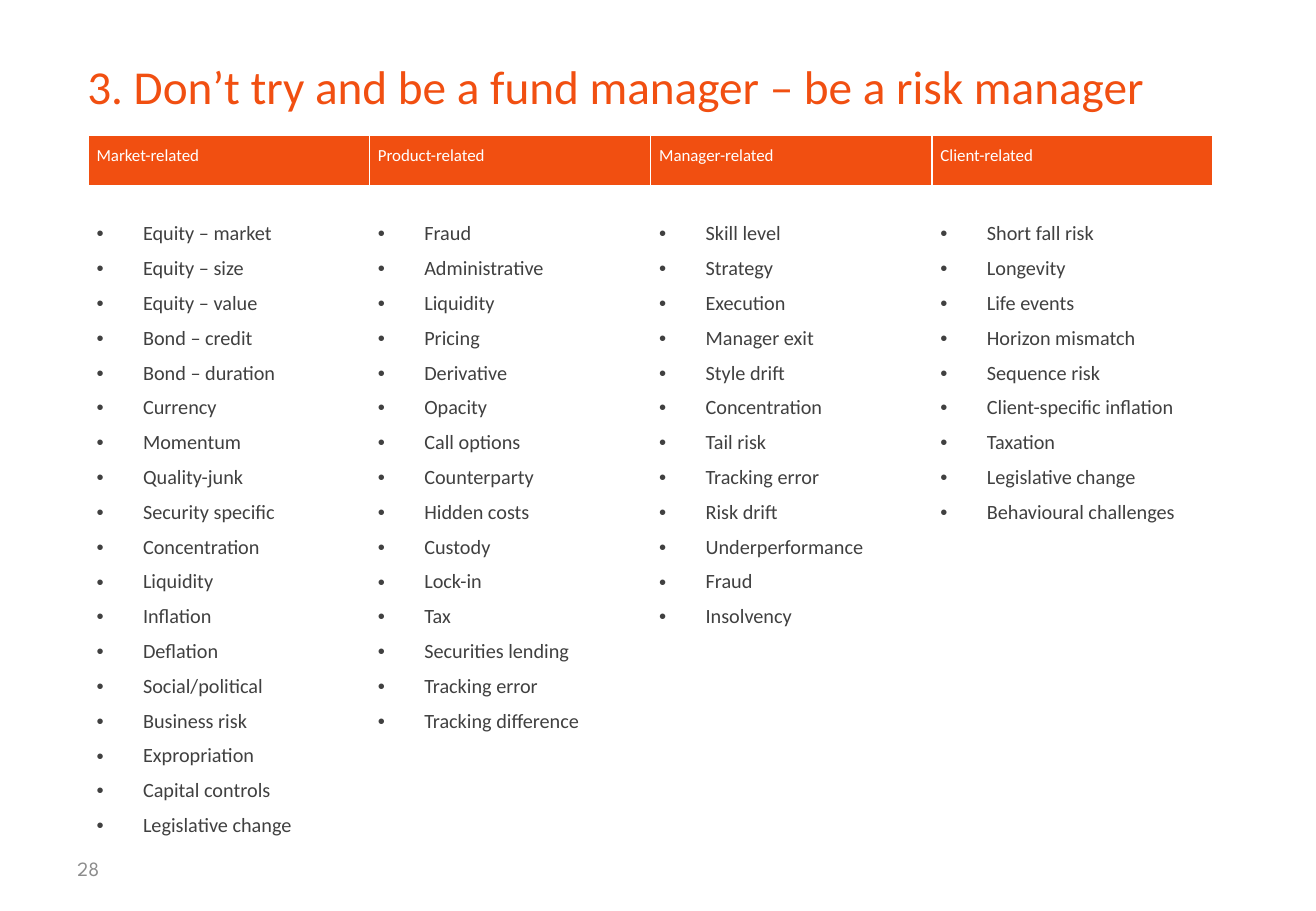
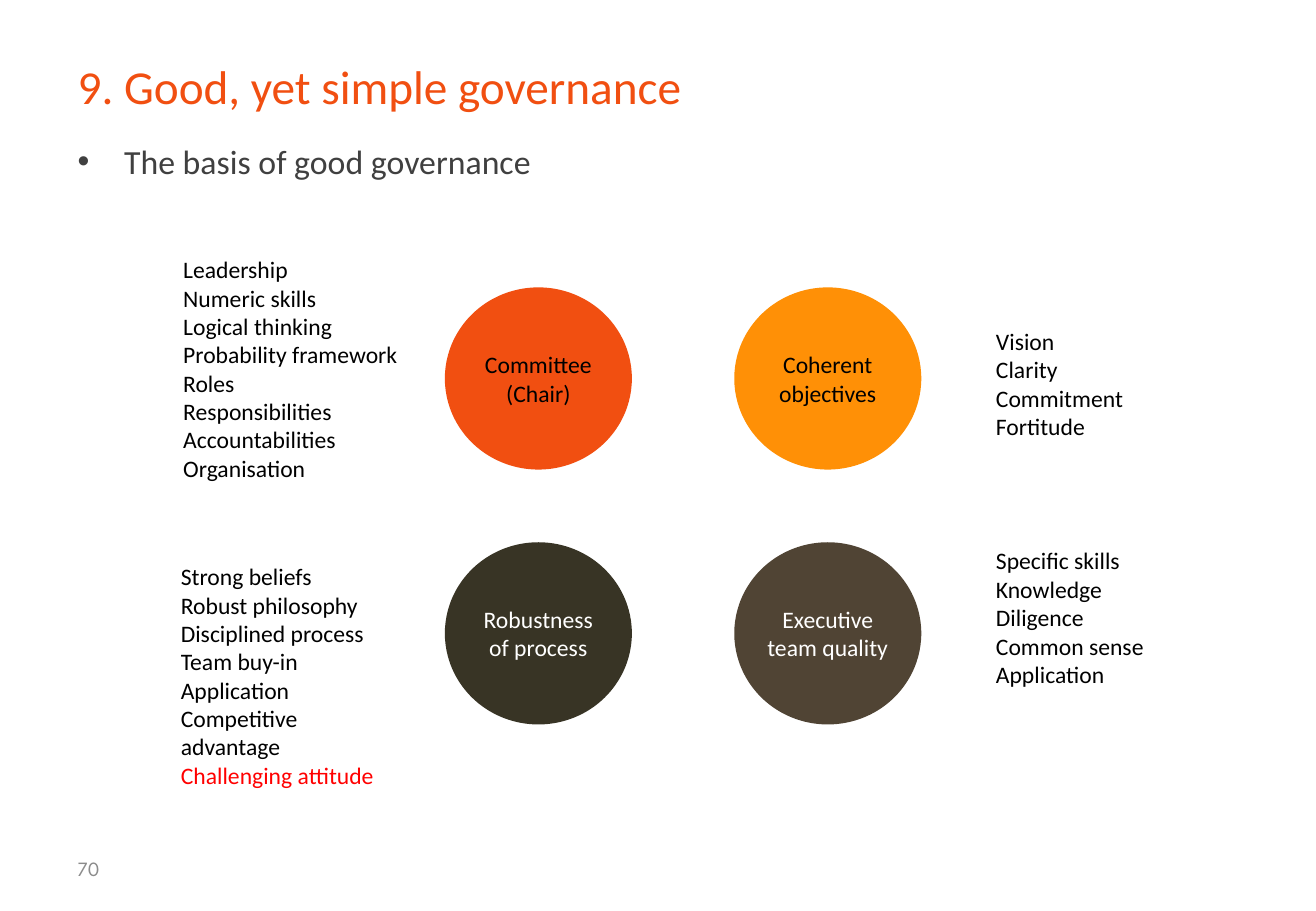
from dataclasses import dataclass

from lxml import etree
from pptx import Presentation
from pptx.dml.color import RGBColor
from pptx.enum.shapes import MSO_SHAPE
from pptx.enum.text import MSO_ANCHOR, PP_ALIGN
from pptx.oxml.ns import qn
from pptx.util import Cm, Pt

ELLIPSE = MSO_SHAPE.OVAL
MIDDLE = MSO_ANCHOR.MIDDLE
TOP = MSO_ANCHOR.TOP
LEFT = PP_ALIGN.LEFT
CENTER = PP_ALIGN.CENTER

COLORS = {
    "orange": "F14F11",
    "amber": "FF9006",
    "olive": "383425",
    "brown": "504434",
    "body": "404040",
    "number": "8C8C8C",
    "black": "000000",
    "white": "FFFFFF",
    "red": "FF0000",
}
TEXT_FONT = "Calibri"
NUMBER_FONT = "League Spartan"
MARGIN_LEFT = 1.37
CONTENT_TOP = 2.82
CONTENT_WIDTH = 24.77
HANGING_INDENT = Cm(0.97)


@dataclass(frozen=True)
class RiskGroup:
    heading: str
    risks: list[str]


@dataclass(frozen=True)
class Pillar:
    column: int
    row: int
    fill: str
    text_color: str
    lines: list[str]


@dataclass(frozen=True)
class Attributes:
    left: float
    top: float
    width: float
    height: float
    lines: list[str]


RISK_GROUPS = [
    RiskGroup("Market-related", [
        "Equity – market", "Equity – size", "Equity – value", "Bond – credit",
        "Bond – duration", "Currency", "Momentum", "Quality-junk",
        "Security specific", "Concentration", "Liquidity", "Inflation",
        "Deflation", "Social/political", "Business risk", "Expropriation",
        "Capital controls", "Legislative change",
    ]),
    RiskGroup("Product-related", [
        "Fraud", "Administrative", "Liquidity", "Pricing", "Derivative",
        "Opacity", "Call options", "Counterparty", "Hidden costs", "Custody",
        "Lock-in", "Tax", "Securities lending", "Tracking error",
        "Tracking difference",
    ]),
    RiskGroup("Manager-related", [
        "Skill level", "Strategy", "Execution", "Manager exit", "Style drift",
        "Concentration", "Tail risk", "Tracking error", "Risk drift",
        "Underperformance", "Fraud", "Insolvency",
    ]),
    RiskGroup("Client-related", [
        "Short fall risk", "Longevity", "Life events", "Horizon mismatch",
        "Sequence risk", "Client-specific inflation", "Taxation",
        "Legislative change", "Behavioural challenges",
    ]),
]

PILLARS = [
    Pillar(0, 0, "orange", "black", ["Committee", "(Chair)"]),
    Pillar(1, 0, "amber", "black", ["Coherent objectives"]),
    Pillar(0, 1, "olive", "white", ["Robustness of process"]),
    Pillar(1, 1, "brown", "white", ["Executive team quality"]),
]

CHALLENGE = "Challenging attitude"
ATTRIBUTES = [
    Attributes(3.58, 5.21, 5.05, 6.0, [
        "Leadership", "Numeric skills", "Logical thinking",
        "Probability framework", "Roles", "Responsibilities",
        "Accountabilities", "Organisation",
    ]),
    Attributes(20.57, 6.71, 3.6, 3.1, [
        "Vision", "Clarity", "Commitment", "Fortitude",
    ]),
    Attributes(3.53, 11.63, 5.05, 5.3, [
        "Strong beliefs", "Robust philosophy", "Disciplined process",
        "Team buy-in", "Application", "Competitive advantage", CHALLENGE,
    ]),
    Attributes(20.57, 11.3, 4.0, 3.7, [
        "Specific skills", "Knowledge", "Diligence", "Common sense",
        "Application",
    ]),
]


def rgb(color: str) -> RGBColor:
    return RGBColor.from_string(COLORS[color])


def add_run(paragraph, text: str, size: float, color: str,
            font: str = TEXT_FONT) -> None:
    run = paragraph.add_run()
    run.text = text
    run.font.size = Pt(size)
    run.font.name = font
    run.font.bold = False
    run.font.color.rgb = rgb(color)


def next_paragraph(text_frame, index: int):
    return text_frame.add_paragraph() if index else text_frame.paragraphs[0]


def add_bullet(paragraph) -> None:
    properties = paragraph._p.get_or_add_pPr()
    properties.set("marL", str(HANGING_INDENT))
    properties.set("indent", str(-HANGING_INDENT))
    etree.SubElement(properties, qn("a:buFont")).set("typeface", "Arial")
    etree.SubElement(properties, qn("a:buChar")).set("char", "•")


def place(shape, left: float, top: float, width: float, height: float) -> None:
    shape.left, shape.top = Cm(left), Cm(top)
    shape.width, shape.height = Cm(width), Cm(height)


def add_text_box(slide, left: float, top: float, width: float, height: float,
                 anchor=TOP):
    box = slide.shapes.add_textbox(Cm(left), Cm(top), Cm(width), Cm(height))
    box.text_frame.word_wrap = True
    box.text_frame.vertical_anchor = anchor
    return box.text_frame


def add_base_slide(presentation, layout: int, title: str, number: str,
                   title_left: float = MARGIN_LEFT):
    slide = presentation.slides.add_slide(presentation.slide_layouts[layout])
    place(slide.shapes.title, title_left, 0.76, CONTENT_WIDTH, 2.06)
    title_frame = slide.shapes.title.text_frame
    title_frame.vertical_anchor = MIDDLE
    title_frame.paragraphs[0].alignment = LEFT
    add_run(title_frame.paragraphs[0], title, 28, "orange")

    number_frame = add_text_box(slide, MARGIN_LEFT, 17.65, 4.8, 1.02, MIDDLE)
    add_run(number_frame.paragraphs[0], number, 12, "number", NUMBER_FONT)
    return slide


def set_borders(cell, top: float, bottom: float) -> None:
    properties = cell._tc.get_or_add_tcPr()
    for side, width in (("L", 1), ("R", 1), ("T", top), ("B", bottom)):
        line = etree.SubElement(properties, qn(f"a:ln{side}"))
        line.set("w", str(Pt(width)))
        fill = etree.SubElement(line, qn("a:solidFill"))
        etree.SubElement(fill, qn("a:srgbClr")).set("val", COLORS["white"])


def set_cell_margins(cell, top) -> None:
    cell.margin_left = cell.margin_right = Cm(0.18)
    cell.margin_top, cell.margin_bottom = top, 0


def add_risk_table(slide) -> None:
    column_width, heading_height, list_height = 5.88, 1.09, 13.9
    count = len(RISK_GROUPS)
    table = slide.shapes.add_table(
        2, count, Cm(1.84), Cm(CONTENT_TOP), Cm(column_width * count),
        Cm(heading_height + list_height)).table
    table.horz_banding = False
    table.rows[0].height = Cm(heading_height)
    table.rows[1].height = Cm(list_height)
    for column, group in enumerate(RISK_GROUPS):
        table.columns[column].width = Cm(column_width)
        heading, risk_list = table.cell(0, column), table.cell(1, column)

        set_borders(heading, 1, 3)
        set_cell_margins(heading, Pt(6.5))
        heading.fill.solid()
        heading.fill.fore_color.rgb = rgb("orange")
        add_run(heading.text_frame.paragraphs[0], group.heading, 10, "white")

        set_borders(risk_list, 3, 1)
        set_cell_margins(risk_list, Pt(20.5))
        risk_list.fill.background()
        for index, risk in enumerate(group.risks):
            paragraph = next_paragraph(risk_list.text_frame, index)
            add_bullet(paragraph)
            paragraph.space_after = Pt(6)
            add_run(paragraph, risk, 12, "body")


def add_pillar(slide, pillar: Pillar) -> None:
    ellipse = slide.shapes.add_shape(
        ELLIPSE, Cm(9.3 + 6.05 * pillar.column), Cm(6.01 + 5.33 * pillar.row),
        Cm(3.91), Cm(3.81))
    ellipse.shadow.inherit = False
    ellipse.fill.solid()
    ellipse.fill.fore_color.rgb = rgb(pillar.fill)
    ellipse.line.fill.background()
    text_frame = ellipse.text_frame
    text_frame.word_wrap = True
    text_frame.vertical_anchor = MIDDLE
    text_frame.margin_left = text_frame.margin_right = Cm(0.05)
    for index, line in enumerate(pillar.lines):
        paragraph = next_paragraph(text_frame, index)
        paragraph.alignment = CENTER
        add_run(paragraph, line, 14, pillar.text_color)


def add_attributes(slide, attributes: Attributes) -> None:
    text_frame = add_text_box(slide, attributes.left, attributes.top,
                              attributes.width, attributes.height)
    for index, line in enumerate(attributes.lines):
        color = "red" if line == CHALLENGE else "black"
        add_run(next_paragraph(text_frame, index), line, 14, color)


def add_risk_slide(presentation) -> None:
    slide = add_base_slide(
        presentation, 5,
        "3. Don’t try and be a fund manager – be a risk manager", "28", 1.57)
    add_risk_table(slide)


def add_governance_slide(presentation) -> None:
    slide = add_base_slide(presentation, 1, "9. Good, yet simple governance", "70")
    body = slide.placeholders[1]
    place(body, MARGIN_LEFT, CONTENT_TOP, CONTENT_WIDTH, 13.92)
    paragraph = body.text_frame.paragraphs[0]
    add_bullet(paragraph)
    paragraph.space_before = Pt(0)
    add_run(paragraph, "The basis of good governance", 20, "body")
    for pillar in PILLARS:
        add_pillar(slide, pillar)
    for attributes in ATTRIBUTES:
        add_attributes(slide, attributes)


def main() -> None:
    presentation = Presentation()
    presentation.slide_width, presentation.slide_height = Cm(27.51), Cm(19.05)
    add_risk_slide(presentation)
    add_governance_slide(presentation)
    presentation.save("out.pptx")


if __name__ == "__main__":
    main()
